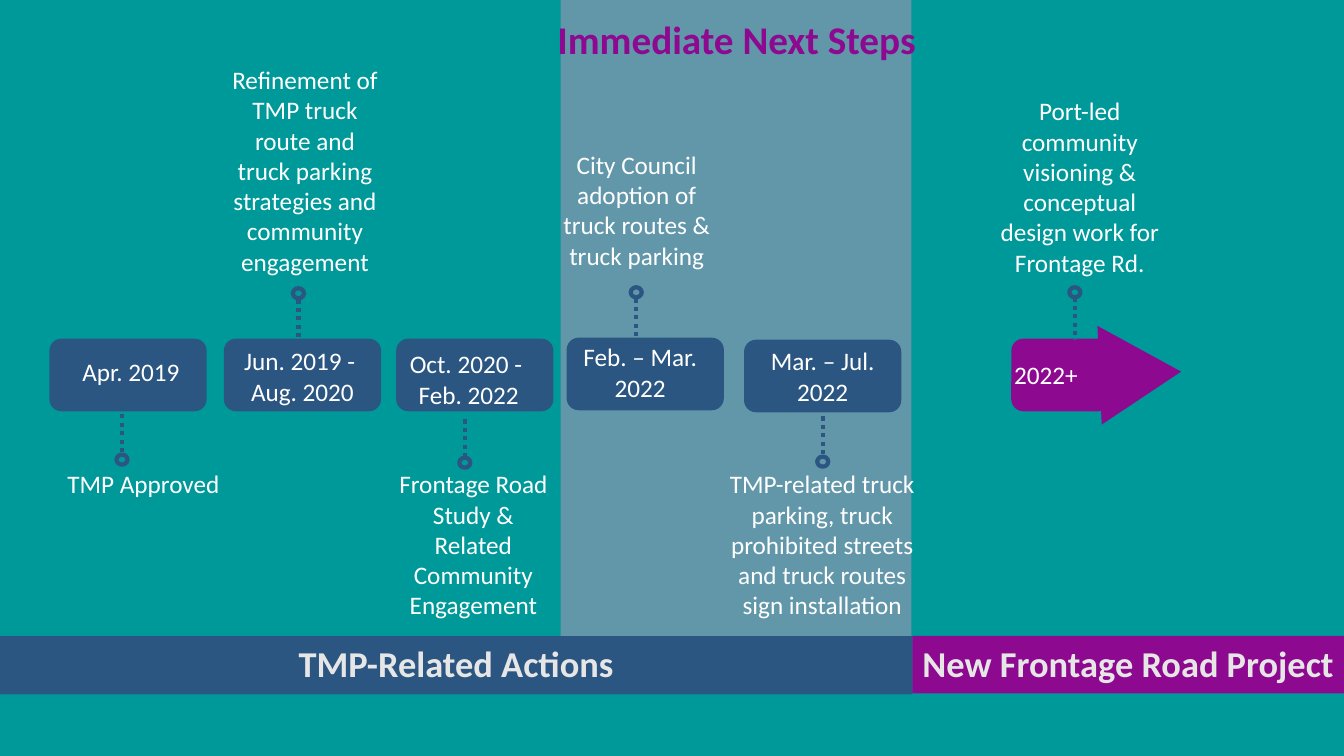
from lxml import etree
from pptx import Presentation
from pptx.dml.color import RGBColor
from pptx.enum import dml, shapes, text
from pptx.oxml.ns import qn
from pptx.util import Inches, Pt

TEAL = RGBColor(0x00, 0x99, 0x99)
HAZE = RGBColor(0x84, 0x97, 0xB0)
NAVY = RGBColor(0x2B, 0x56, 0x81)
PURPLE = RGBColor(0x8D, 0x09, 0x90)
WHITE = RGBColor(0xFF, 0xFF, 0xFF)
LIGHT = RGBColor(0xE7, 0xE6, 0xE6)
SHAPE = shapes.MSO_SHAPE
CENTER, LEFT = text.PP_ALIGN.CENTER, text.PP_ALIGN.LEFT
TOP, MIDDLE = text.MSO_ANCHOR.TOP, text.MSO_ANCHOR.MIDDLE


class Timeline:
    """Holds the slide and the style shared by its elements."""

    font = "Calibri"
    dot_w, dot_h = 0.11, 0.1

    def __init__(self, s):
        self.s = s
        s.background.fill.solid()
        s.background.fill.fore_color.rgb = TEAL

    def set_text(self, sp, lines, size=18, color=WHITE, bold=False, align=CENTER, anchor=TOP):
        tf = sp.text_frame
        tf.text = lines
        tf.word_wrap = True
        tf.vertical_anchor = anchor
        for p in tf.paragraphs:
            p.alignment = align
            p.font.name, p.font.size = self.font, Pt(size)
            p.font.bold, p.font.color.rgb = bold, color

    def title(self, lines, x, y, w, h):
        sp = self.s.shapes.title
        sp.left, sp.top, sp.width, sp.height = map(Inches, (x, y, w, h))
        self.set_text(sp, lines, 28, PURPLE, bold=True)
        sp.text_frame.auto_size = text.MSO_AUTO_SIZE.NONE
        self.s.shapes.element.append(sp.element)  # bring to front

    def shape(self, kind, x, y, w, h, color=None):
        sp = self.s.shapes.add_shape(kind, *map(Inches, (x, y, w, h)))
        sp.shadow.inherit = False
        if color is None:
            sp.fill.background()
        else:
            sp.fill.solid()
            sp.fill.fore_color.rgb = color
            sp.line.fill.background()
        return sp

    def band(self, x, y, w, h, color, opacity):
        sp = self.shape(SHAPE.RECTANGLE, x, y, w, h, color)
        rgb = sp.element.spPr.find(qn("a:solidFill")).find(qn("a:srgbClr"))
        etree.SubElement(rgb, qn("a:alpha")).set("val", str(opacity * 1000))

    def label(self, lines, x, y, w, h, align=CENTER):
        sp = self.s.shapes.add_textbox(*map(Inches, (x, y, w, h)))
        self.set_text(sp, lines, align=align)

    def bar(self, lines, x, y, w, h, color, align):
        sp = self.shape(SHAPE.RECTANGLE, x, y, w, h, color)
        self.set_text(sp, lines, 26, LIGHT, bold=True, align=align)

    def pin(self, x, y1, y2, dot_y):
        """Dotted stem from y1 to y2 with a ring whose top is at dot_y."""
        stem = self.s.shapes.add_connector(
            shapes.MSO_CONNECTOR.STRAIGHT, *map(Inches, (x, y1, x, y2)))
        etree.SubElement(stem.element.spPr, qn("a:effectLst"))
        stem.line.dash_style = dml.MSO_LINE.ROUND_DOT
        ring = self.shape(SHAPE.FLOWCHART_CONNECTOR, x - self.dot_w / 2, dot_y,
                          self.dot_w, self.dot_h)
        for sp in (stem, ring):
            sp.line.color.rgb = NAVY
            sp.line.width = Pt(3)


def main():
    prs = Presentation()
    prs.slide_width, prs.slide_height = Inches(13.33), Inches(7.5)
    s = prs.slides.add_slide(prs.slide_layouts[5])
    t = Timeline(s)

    # Highlighted period
    t.band(5.56, -0.02, 3.48, 6.9, HAZE, 75)

    # Date cards
    for x, y in ((0.49, 3.36), (2.22, 3.36), (3.93, 3.36), (5.62, 3.35)):
        t.shape(SHAPE.ROUNDED_RECTANGLE, x, y, 1.56, 0.72, NAVY)
    last = t.shape(SHAPE.ROUNDED_RECTANGLE, 7.38, 3.37, 1.56, 0.72, NAVY)
    t.set_text(last, "Mar. – Jul. 2022", anchor=MIDDLE)

    # Purple arrow for the future project
    t.shape(SHAPE.ROUNDED_RECTANGLE, 10.03, 3.36, 0.99, 0.72, PURPLE)
    t.shape(SHAPE.ISOSCELES_TRIANGLE, 10.82, 3.3, 0.98, 0.81, PURPLE).rotation = 87.5

    # Dates
    t.label("Apr. 2019", 0.45, 3.49, 1.7, 0.4)
    t.label("Jun. 2019 - \nAug. 2020", 2.17, 3.38, 1.66, 0.71)
    t.label("Oct. 2020 - \nFeb. 2022", 3.87, 3.41, 1.56, 0.71)
    t.label("Feb. – Mar. 2022", 5.67, 3.34, 1.36, 0.71)
    t.label("2022+", 9.96, 3.52, 1.06, 0.4, LEFT)

    # Descriptions below and above the cards
    t.label("TMP Approved", 0.57, 4.6, 1.71, 0.4, LEFT)
    t.label("Refinement of TMP truck route and truck parking strategies "
            "and community engagement", 2.17, 0.59, 1.71, 2.22)
    t.label("Frontage Road Study & Related Community Engagement",
            3.84, 4.6, 1.71, 1.62)
    t.label("City Council adoption of truck routes & truck parking",
            5.46, 1.43, 1.71, 1.31)
    t.label("TMP-related truck parking, truck prohibited streets "
            "and truck routes sign installation", 7.11, 4.6, 2.09, 1.62)
    t.label("Port-led community visioning & conceptual design work "
            "for Frontage Rd.", 9.76, 0.9, 1.9, 1.92)

    # Dotted pins
    for x, y1, y2, dot_y in ((1.21, 4.11, 4.5, 4.51), (4.61, 4.16, 4.55, 4.54),
                             (8.16, 4.13, 4.52, 4.53), (2.96, 2.97, 3.36, 2.86),
                             (6.31, 2.96, 3.35, 2.85), (10.66, 2.95, 3.37, 2.85)):
        t.pin(x, y1, y2, dot_y)

    # Bottom bars and heading
    t.bar("TMP-Related Actions", 0, 6.31, 9.05, 0.58, NAVY, CENTER)
    t.bar("New Frontage Road Project", 9.05, 6.31, 4.29, 0.57, PURPLE, LEFT)
    t.title("Immediate Next Steps", 5.37, 0.1, 3.87, 0.57)

    prs.save("out.pptx")


if __name__ == "__main__":
    main()
